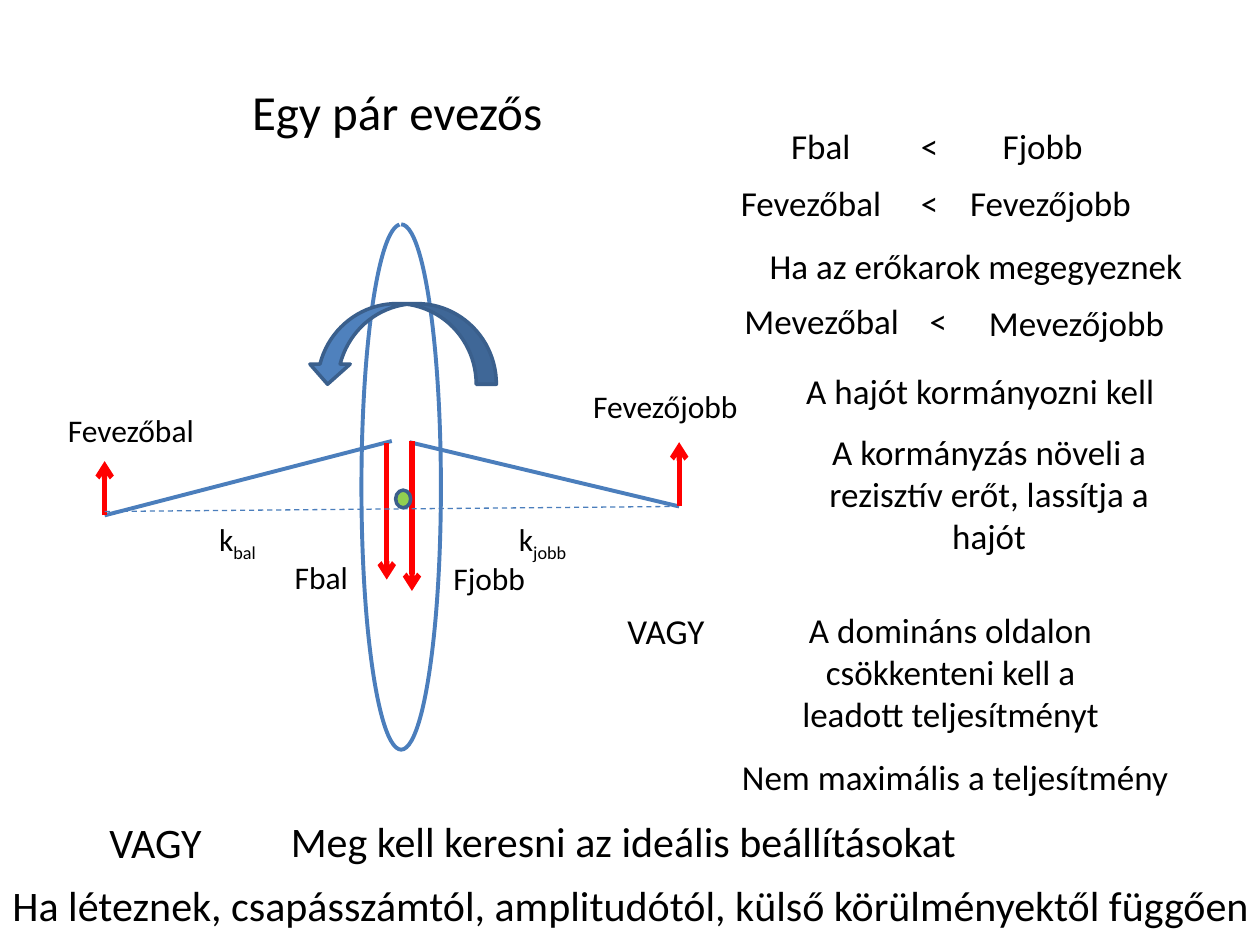
from dataclasses import dataclass

from lxml.etree import SubElement
from pptx import Presentation
from pptx.dml.color import RGBColor
from pptx.enum.dml import MSO_LINE
from pptx.enum.shapes import MSO_CONNECTOR, MSO_SHAPE
from pptx.enum.text import MSO_ANCHOR, MSO_AUTO_SIZE, PP_ALIGN
from pptx.oxml.ns import qn
from pptx.util import Pt

COLORS = {
    "text": "000000",
    "oar": "4B7EBC",
    "force": "FF0000",
    "turn": "4F81BD",
    "outline": "3A5F8C",
    "pivot": "92D050",
}


@dataclass
class Label:
    text: str
    left: float
    top: float
    width: float
    size: float = 20
    subscript: str = ""
    wrap: bool = False
    lines: int = 1

    @property
    def height(self) -> float:
        return self.size * 1.22 * self.lines + 7.2


@dataclass
class Line:
    start: tuple[float, float]
    end: tuple[float, float]
    color: str = "oar"
    weight: float = 2.25
    arrow: bool = False
    dashed: bool = False


@dataclass
class Figure:
    kind: MSO_SHAPE
    left: float
    top: float
    width: float
    height: float
    line: str = "outline"
    weight: float = 2
    fill: str = ""
    adjustments: tuple[float, ...] = ()
    mirrored: bool = False


TITLE = Label("Egy pár evezős", 136.8, 43.2, 182.2, 28)

HULL = Figure(MSO_SHAPE.ARC, 206.6, 128.2, 45.4, 300.2, "oar", 2.25,
              adjustments=(162, 161.777))
TURN = Figure(MSO_SHAPE.CURVED_DOWN_ARROW, 175.7, 173.5, 108, 46.1,
              fill="turn", mirrored=True)
PIVOT = Figure(MSO_SHAPE.OVAL, 226.1, 280.1, 8.6, 10.1, fill="pivot")

LEFT_BLADE = (59.8, 294.5)
RIGHT_BLADE = (388.1, 289.4)
OARS = [
    Line((223.9, 252), LEFT_BLADE),
    Line(RIGHT_BLADE, (234, 252.7)),
]
FORCES = [
    Line(start, end, "force", 3, arrow=True)
    for start, end in [
        ((221, 253.4), (221, 331.2)),
        ((235.4, 252), (235.4, 337.7)),
        (RIGHT_BLADE, (388.1, 252.7)),
        (LEFT_BLADE, (59.8, 263.5)),
    ]
]
LEVER = Line((59.8, 292.3), RIGHT_BLADE, weight=0.75, dashed=True)

FORCE_LABELS = [
    Label("Fbal", 161.3, 315.4, 45.4, 18),
    Label("Fjobb", 252, 316.1, 56.2, 18),
    Label("Fevezőbal", 31.7, 231.1, 87.8, 18),
    Label("Fevezőjobb", 331.9, 217.4, 97.9, 18),
    Label("k", 118.1, 293.8, 37.4, 18, "bal"),
    Label("k", 289.4, 293.8, 44.6, 18, "jobb"),
]
COMPARISONS = [
    Label("Fbal", 445, 67.7, 64.1, wrap=True),
    Label("<", 519.1, 67.7, 24.5, wrap=True),
    Label("Fjobb", 565.9, 67.7, 79.2, wrap=True),
    Label("Fevezőbal", 416.2, 100.1, 123.8, wrap=True),
    Label("<", 519.1, 100.1, 24.5, wrap=True),
    Label("Fevezőjobb", 547.2, 100.1, 138.2, wrap=True),
    Label("Ha az erőkarok megegyeznek", 432.7, 136.1, 252.7),
    Label("Mevezőbal", 418.3, 167.8, 103.7),
    Label("<", 524.2, 167.8, 24.5, wrap=True),
    Label("Mevezőjobb", 558, 168.5, 115.2),
]
CONCLUSIONS = [
    Label("A hajót kormányozni kell", 453.6, 207.4, 215.3),
    Label("A kormányzás növeli a rezisztív erőt, lassítja a hajót",
          450.7, 242.6, 229, wrap=True, lines=3),
    Label("VAGY", 351.4, 344.9, 59),
    Label("A domináns oldalon csökkenteni kell a leadott teljesítményt",
          447.8, 344.2, 190.8, wrap=True, lines=3),
    Label("Nem maximális a teljesítmény", 416.9, 428.4, 260.6),
    Label("VAGY", 55.4, 463, 67.7, 24),
    Label("Meg kell keresni az ideális beállításokat", 159.1, 462.2, 398.2, 24),
    Label("Ha léteznek, csapásszámtól, amplitudótól, külső körülményektől függően",
          0, 499, 727.9, 24),
]


def rgb(name: str) -> RGBColor:
    return RGBColor.from_string(COLORS[name])


def apply(target, values: dict) -> None:
    for name, value in values.items():
        setattr(target, name, value)


def write_label(box, label: Label) -> None:
    apply(box, {"left": Pt(label.left), "top": Pt(label.top),
                "width": Pt(label.width), "height": Pt(label.height)})
    frame = box.text_frame
    apply(frame, {"auto_size": MSO_AUTO_SIZE.SHAPE_TO_FIT_TEXT,
                  "word_wrap": label.wrap, "vertical_anchor": MSO_ANCHOR.TOP})
    para = frame.paragraphs[0]
    para.alignment = PP_ALIGN.CENTER if label.lines > 1 else PP_ALIGN.LEFT
    for text in filter(None, (label.text, label.subscript)):
        span = para.add_run()
        span.text = text
        apply(span.font, {"name": "Calibri", "size": Pt(label.size)})
        span.font.color.rgb = rgb("text")
    if label.subscript:
        span.font._element.set("baseline", "-25000")


def add_labels(page, labels: list[Label]) -> None:
    for label in labels:
        write_label(page.shapes.add_textbox(0, 0, 0, 0), label)


def add_line(page, line: Line) -> None:
    connector = page.shapes.add_connector(
        MSO_CONNECTOR.STRAIGHT, *map(Pt, line.start + line.end))
    connector.line.color.rgb = rgb(line.color)
    connector.line.width = Pt(line.weight)
    if line.dashed:
        connector.line.dash_style = MSO_LINE.DASH
    if line.arrow:
        outline = connector.line._get_or_add_ln()
        SubElement(outline, qn("a:tailEnd"), type="arrow")
    SubElement(connector._element.spPr, qn("a:effectLst"))


def add_figure(page, figure: Figure) -> None:
    shape = page.shapes.add_shape(
        figure.kind, Pt(figure.left), Pt(figure.top),
        Pt(figure.width), Pt(figure.height))
    shape.shadow.inherit = False
    for index, value in enumerate(figure.adjustments):
        shape.adjustments[index] = value
    if figure.fill:
        shape.fill.solid()
        shape.fill.fore_color.rgb = rgb(figure.fill)
    else:
        shape.fill.background()
    shape.line.color.rgb = rgb(figure.line)
    shape.line.width = Pt(figure.weight)
    if figure.mirrored:
        shape._element.spPr.find(qn("a:xfrm")).set("flipH", "1")


def main() -> None:
    deck = Presentation()
    apply(deck, {"slide_width": Pt(720), "slide_height": Pt(540)})
    page = deck.slides.add_slide(deck.slide_layouts.get_by_name("Title Only"))
    write_label(page.shapes.title, TITLE)
    add_figure(page, HULL)
    for line in OARS + FORCES:
        add_line(page, line)
    add_figure(page, TURN)
    add_line(page, LEVER)
    add_figure(page, PIVOT)
    add_labels(page, FORCE_LABELS + COMPARISONS + CONCLUSIONS)
    deck.save("out.pptx")


if __name__ == "__main__":
    main()
